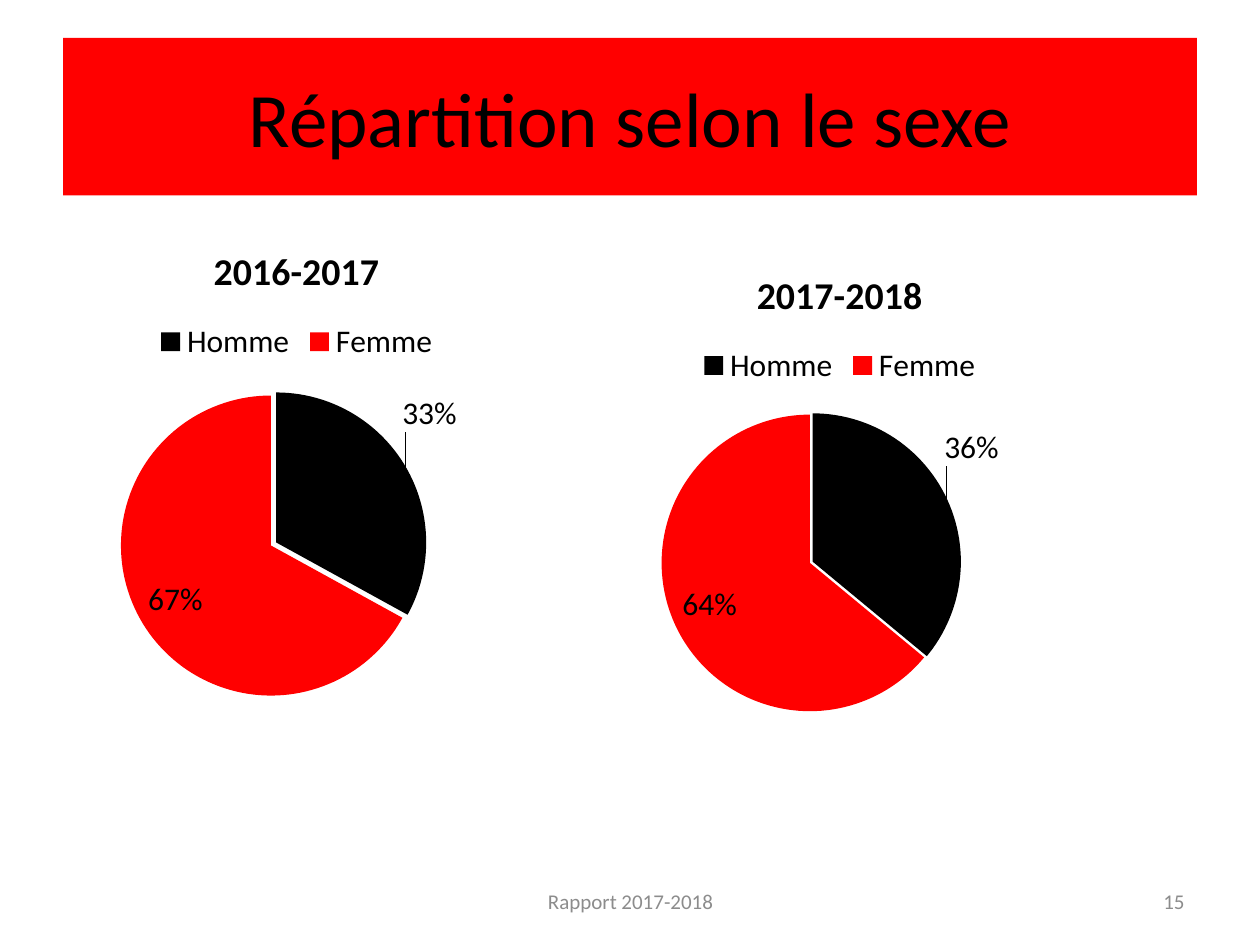
from lxml import etree
from pptx import Presentation
from pptx import util as u
from pptx.chart import data as chart_data
from pptx.dml.color import RGBColor
from pptx.enum import chart as ch, text
from pptx.oxml.ns import qn

FONT = "Calibri"
BLACK, RED, GREY = "000000", "FF0000", "8C8C8C"
GENDER_COLORS = {"Homme": BLACK, "Femme": RED}


def rgb(value):
    return RGBColor.from_string(value)


def set_font(font, size, color, bold=False):
    font.name, font.size, font.bold = FONT, u.Pt(size), bold
    font.color.rgb = rgb(color)


def place(shape, left, top, width, height):
    shape.left, shape.top = u.Inches(left), u.Inches(top)
    shape.width, shape.height = u.Inches(width), u.Inches(height)


def write(shape, words, size, color, align):
    frame = shape.text_frame
    frame.word_wrap = True
    frame.vertical_anchor = text.MSO_ANCHOR.MIDDLE
    paragraph = frame.paragraphs[0]
    paragraph.text, paragraph.alignment = words, align
    set_font(paragraph.font, size, color)


def add_title(slide, words):
    title = slide.shapes.title
    place(title, 0.5, 0.3, 9, 1.25)
    title.fill.solid()
    title.fill.fore_color.rgb = rgb(RED)
    write(title, words, 44, BLACK, text.PP_ALIGN.CENTER)


def add_footer(slide, words, left, width, align):
    box = slide.shapes.add_textbox(
        u.Inches(left), u.Inches(6.95), u.Inches(width), u.Inches(0.4))
    write(box, words, 12, GREY, align)


def manual_layout(**values):
    """Return a c:layout element holding the given settings in order."""
    layout = etree.Element(qn("c:layout"))
    manual = etree.SubElement(layout, qn("c:manualLayout"))
    for tag, value in values.items():
        etree.SubElement(manual, qn("c:" + tag)).set("val", str(value))
    return layout


def place_pie(plot_area, x, y, w, h):
    for old in plot_area.findall(qn("c:layout")):
        plot_area.remove(old)
    plot_area.insert(0, manual_layout(
        layoutTarget="inner", xMode="edge", yMode="edge", x=x, y=y, w=w, h=h))


def style_slices(series, explosion):
    for index, color in enumerate(GENDER_COLORS.values()):
        fill = series.points[index].format.fill
        fill.solid()
        fill.fore_color.rgb = rgb(color)
    # Pull the first slice out of the pie
    slice_format = series._element.find(qn("c:dPt")).find(qn("c:spPr"))
    pull = etree.Element(qn("c:explosion"))
    pull.set("val", str(explosion))
    slice_format.addprevious(pull)


def label_slices(series):
    labels = series.data_labels
    labels.show_percentage, labels.show_value = True, False
    labels.position = ch.XL_LABEL_POSITION.INSIDE_END
    set_font(labels.font, 18, BLACK)
    # The first label sits outside, raised on a leader line
    outside = series.points[0].data_label
    set_font(outside.font, 18, BLACK)
    outside.position = ch.XL_LABEL_POSITION.OUTSIDE_END
    label = labels._element.find(qn("c:dLbl"))
    label.find(qn("c:idx")).addnext(manual_layout(x=-0.02, y=-0.06))
    label.find(qn("c:showVal")).set("val", "0")
    label.find(qn("c:showPercent")).set("val", "1")


def add_pie(slide, year, shares, position, pie_area, explosion):
    data = chart_data.CategoryChartData()
    data.categories = list(GENDER_COLORS)
    data.add_series(year, shares)
    chart = slide.shapes.add_chart(
        ch.XL_CHART_TYPE.PIE, *map(u.Inches, position), data).chart
    set_font(chart.font, 18, BLACK)

    chart.has_title = True
    heading = chart.chart_title.text_frame
    heading.text = year
    set_font(heading.paragraphs[0].font, 21.6, BLACK, bold=True)

    chart.has_legend = True
    chart.legend.position = ch.XL_LEGEND_POSITION.TOP
    chart.legend.include_in_layout = False
    set_font(chart.legend.font, 18, BLACK)

    plot = chart.plots[0]
    plot.vary_by_categories = True
    style_slices(plot.series[0], explosion)
    label_slices(plot.series[0])
    place_pie(chart._chartSpace.chart.plotArea, *pie_area)


def main():
    deck = Presentation()
    deck.slide_width, deck.slide_height = u.Inches(10), u.Inches(7.5)
    slide = deck.slides.add_slide(deck.slide_layouts[5])

    add_title(slide, "Répartition selon le sexe")

    # One pie per school year
    add_pie(slide, "2016-2017", (33, 67), (0.5, 1.75, 3.71, 3.97),
            (0.12, 0.35, 0.65, 0.6), 4)
    add_pie(slide, "2017-2018", (36, 64), (4.84, 1.94, 3.65, 3.86),
            (0.11, 0.35, 0.65, 0.61), 2)

    # Footer and page number
    add_footer(slide, "Rapport 2017-2018", 3.42, 3.17, text.PP_ALIGN.CENTER)
    add_footer(slide, "15", 7.17, 2.33, text.PP_ALIGN.RIGHT)

    deck.save("out.pptx")


if __name__ == "__main__":
    main()
